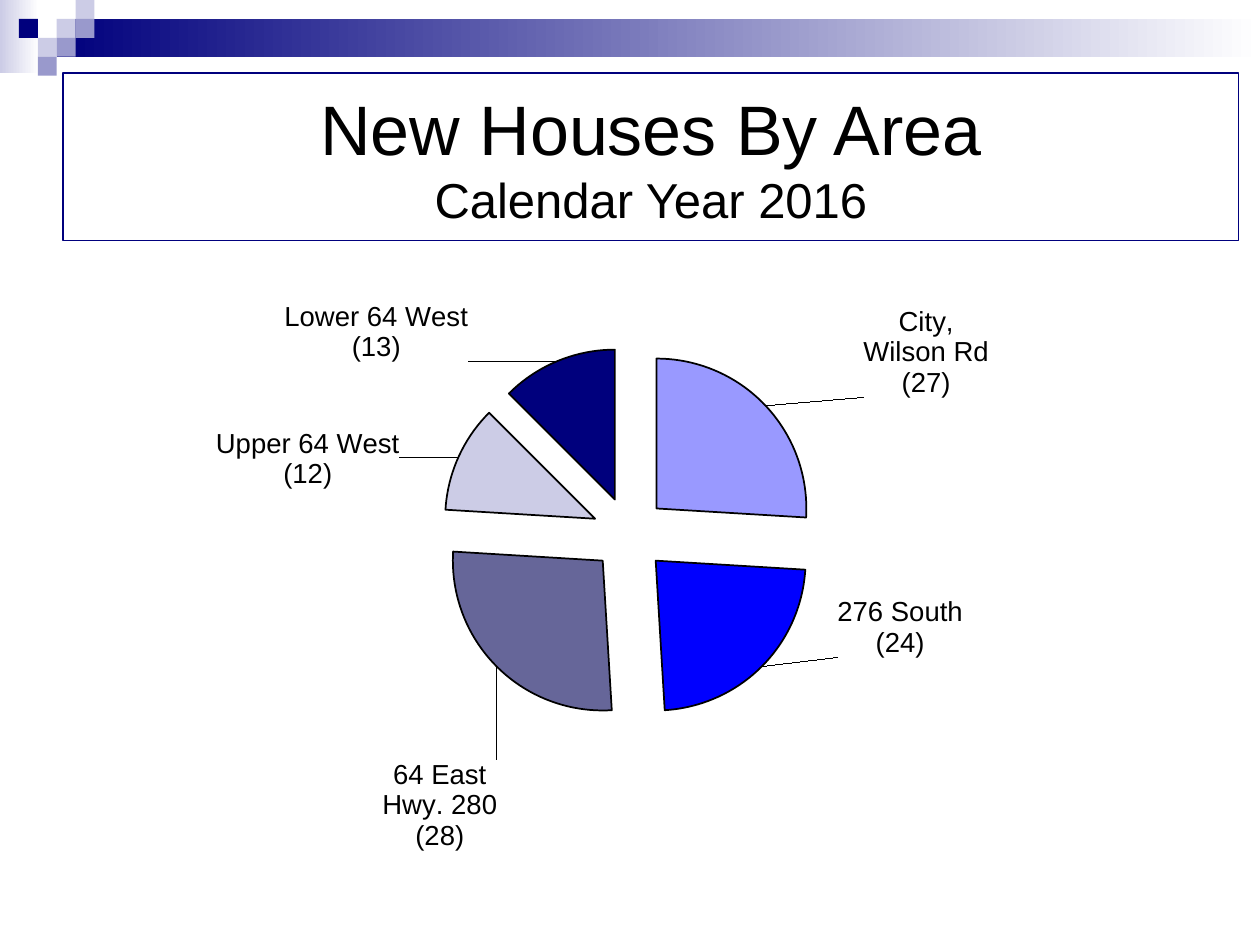
import pptx
import pptx.chart.data
import pptx.dml.color
import pptx.enum.chart
import pptx.enum.shapes
import pptx.enum.text
import pptx.oxml
import pptx.oxml.ns
import pptx.util

Pt = pptx.util.Pt
qn = pptx.oxml.ns.qn

COLORS = {"navy": "00007D", "lavender": "CCCCE6", "violet": "9999CC", "white": "FFFFFF",
          "black": "000000", "periwinkle": "9999FF", "blue": "0000FF", "slate": "666699"}
FONT = "Arial"

TITLE = [("New Houses By Area", 40), ("Calendar Year 2016", 28)]
TITLE_BOX = (36, 41.8, 671.8, 95.8)

# left, top, width, height, colour that fades to white
BANDS = [(0, 0, 22.3, 41.8, "lavender"), (32.4, 10.8, 687.6, 21.6, "navy")]

# column, row, colour on a grid of small squares
SQUARE = 10.8
SQUARES = [(3, 1, "lavender"), (4, 0, "lavender"), (4, 1, "violet"), (2, 2, "lavender"),
           (1, 1, "navy"), (3, 2, "violet"), (2, 3, "violet")]

CHART_BOX = (30.2, 149.8, 659.5, 375.1)
PLOT = {"x": 0.337, "y": 0.129, "w": 0.325, "h": 0.571}
EXPLOSION = 25
LABEL_SIZE = 15.7
# label lines, houses, colour, label shift as a share of the chart's size
AREAS = [
    (["City,", "Wilson Rd"], 27, "periwinkle", (0.08, -0.005)),
    (["276 South"], 24, "blue", (0.061, -0.114)),
    (["64 East", "Hwy. 280"], 28, "slate", (0.005, 0.134)),
    (["Upper 64 West"], 12, "lavender", (-0.045, 0.053)),
    (["Lower 64 West"], 13, "navy", (-0.075, 0.012)),
]


def rgb(name):
    return pptx.dml.color.RGBColor.from_string(COLORS[name])


def set_font(font, size):
    for key, value in {"name": FONT, "size": Pt(size), "bold": False}.items():
        setattr(font, key, value)
    font.color.rgb = rgb("black")


def add_rect(s, left, top, width, height):
    sp = s.shapes.add_shape(pptx.enum.shapes.MSO_SHAPE.RECTANGLE,
                            Pt(left), Pt(top), Pt(width), Pt(height))
    sp.shadow.inherit = False
    sp.line.fill.background()
    return sp


def manual_layout(values, inner=False):
    """Return a c:layout element that holds the given fractions."""
    target = '<c:layoutTarget val="inner"/>' if inner else ""
    modes = '<c:xMode val="edge"/><c:yMode val="edge"/>' if inner else ""
    parts = "".join(f'<c:{key} val="{value}"/>' for key, value in values.items())
    return pptx.oxml.parse_xml(
        f'<c:layout {pptx.oxml.ns.nsdecls("c")}><c:manualLayout>'
        f"{target}{modes}{parts}</c:manualLayout></c:layout>")


def add_decoration(s):
    for *box, color in BANDS:
        sp = add_rect(s, *box)
        sp.fill.gradient()
        sp.fill.gradient_angle = 0
        for stop, name in zip(sp.fill.gradient_stops, (color, "white")):
            stop.color.rgb = rgb(name)
    for col, row, color in SQUARES:
        sp = add_rect(s, col * SQUARE, row * SQUARE, SQUARE, SQUARE)
        sp.fill.solid()
        sp.fill.fore_color.rgb = rgb(color)


def add_title(s):
    sp = s.shapes.add_textbox(*map(Pt, TITLE_BOX))
    sp.line.color.rgb = rgb("navy")
    sp.line.width = Pt(0.75)
    tf = sp.text_frame
    tf.word_wrap = True
    tf.vertical_anchor = pptx.enum.text.MSO_ANCHOR.MIDDLE
    p = tf.paragraphs[0]
    p.alignment = pptx.enum.text.PP_ALIGN.CENTER
    for i, (text, size) in enumerate(TITLE):
        if i:
            p.add_line_break()
        r = p.add_run()
        r.text = text
        set_font(r.font, size)


def add_label(point, lines, shift):
    label = point.data_label
    tf = label.text_frame
    for i, line in enumerate(lines):
        p = tf.add_paragraph() if i else tf.paragraphs[0]
        p.alignment = pptx.enum.text.PP_ALIGN.CENTER
        r = p.add_run()
        r.text = line
        set_font(r.font, LABEL_SIZE)
    label.position = pptx.enum.chart.XL_LABEL_POSITION.OUTSIDE_END
    dlbl = tf._txBody.getparent().getparent()
    for old in dlbl.findall(qn("c:layout")):
        dlbl.remove(old)
    dlbl.find(qn("c:idx")).addnext(manual_layout(dict(zip("xy", shift))))


def add_pie(s):
    data = pptx.chart.data.CategoryChartData()
    data.categories = [" ".join(lines) for lines, *_ in AREAS]
    data.add_series("Series 1", [houses for _, houses, *_ in AREAS])
    chart = s.shapes.add_chart(pptx.enum.chart.XL_CHART_TYPE.PIE,
                               *map(Pt, CHART_BOX), data).chart
    chart.has_legend = False
    chart.has_title = False
    set_font(chart.font, LABEL_SIZE)
    plot = chart.plots[0]
    plot.vary_by_categories = True

    area = chart._chartSpace.chart.plotArea
    for old in area.findall(qn("c:layout")):
        area.remove(old)
    area.insert(0, manual_layout(PLOT, inner=True))

    series = plot.series[0]
    series.format.line.color.rgb = rgb("black")
    series._element.find(qn("c:spPr")).addnext(pptx.oxml.parse_xml(
        f'<c:explosion {pptx.oxml.ns.nsdecls("c")} val="{EXPLOSION}"/>'))

    labels = series.data_labels
    set_font(labels.font, LABEL_SIZE)
    labels.show_value = True
    labels.show_category_name = True
    for i, (lines, houses, color, shift) in enumerate(AREAS):
        point = series.points[i]
        point.format.fill.solid()
        point.format.fill.fore_color.rgb = rgb(color)
        point.format.line.color.rgb = rgb("black")
        point.format.line.width = Pt(1)
        add_label(point, lines + [f"({houses})"], shift)
    for leader in series._element.iter(qn("c:showLeaderLines")):
        leader.set("val", "1")


def main():
    prs = pptx.Presentation()
    prs.slide_width, prs.slide_height = Pt(720), Pt(540)
    s = prs.slides.add_slide(prs.slide_layouts[6])
    add_decoration(s)
    add_title(s)
    add_pie(s)
    prs.save("out.pptx")


if __name__ == "__main__":
    main()
